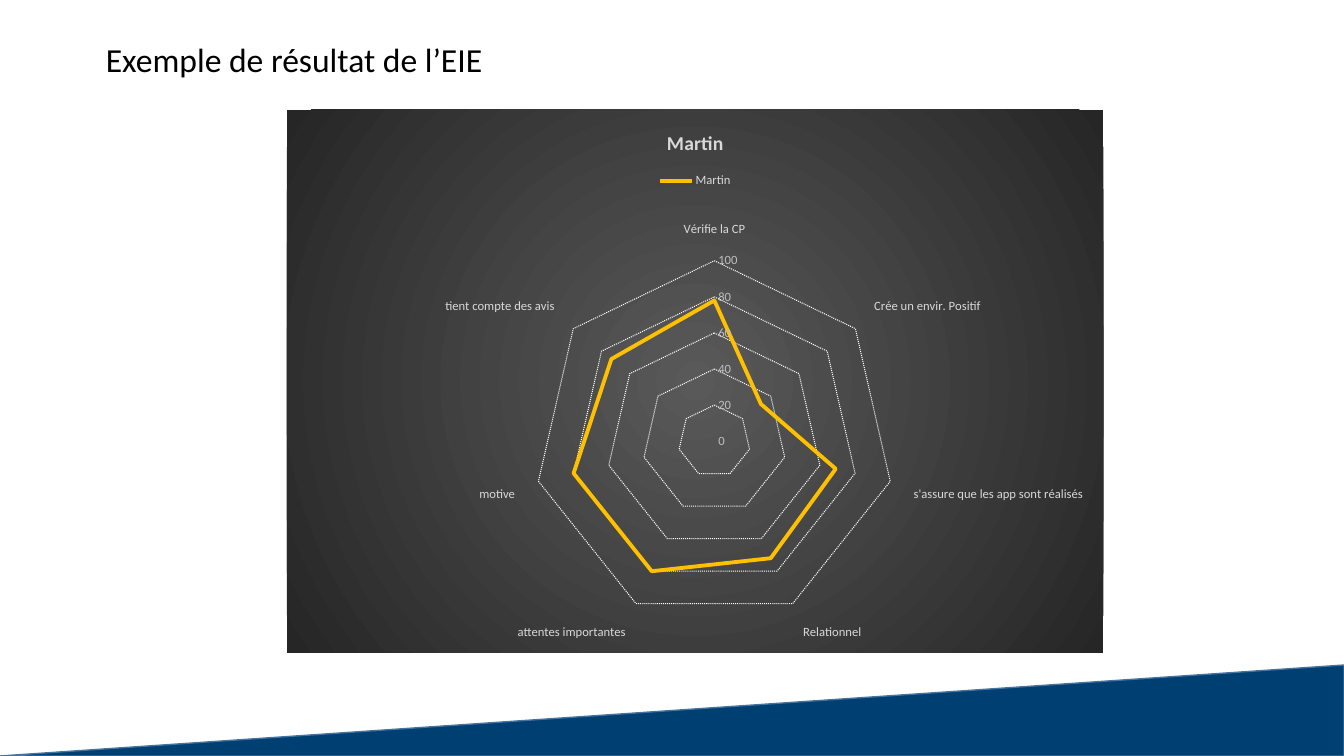
from lxml import etree
from pptx import Presentation
from pptx.chart import data
from pptx.dml import color
from pptx.enum import chart as chart_enum, dml, shapes, text
from pptx.oxml import ns, parse_xml
from pptx.util import Pt

FONT = "Calibri"
RESULTS = {
    "Vérifie la CP": 78,
    "Crée un envir. Positif": 33,
    "s'assure que les app sont réalisés": 69,
    "Relationnel": 72,
    "attentes importantes": 80,
    "motive": 80,
    "tient compte des avis": 73,
}
PLOT_AREA = {"x": 0.274, "y": 0.278, "w": 0.499, "h": 0.665}


def rgb(value):
    return color.RGBColor.from_string(value)


def style_font(font, size, fill, bold=False):
    font.name = FONT
    font.size = Pt(size)
    font.bold = bold
    font.color.rgb = rgb(fill)


def style_line(line, fill, width):
    line.color.rgb = rgb(fill)
    line.width = Pt(width)


def add_band(slide, left, top, width, height):
    band = slide.shapes.add_shape(
        shapes.MSO_SHAPE.ISOSCELES_TRIANGLE, Pt(left), Pt(top), Pt(width), Pt(height))
    band.adjustments[0] = 1
    band.shadow.inherit = False
    band.fill.solid()
    band.fill.fore_color.rgb = rgb("003F72")
    style_line(band.line, "43739E", 1)


def set_title(slide, left, top, width, height):
    title = slide.shapes.title
    title.left, title.top, title.width, title.height = map(Pt, (left, top, width, height))
    frame = title.text_frame
    frame.text = "Exemple de résultat de l’EIE"
    frame.margin_left = frame.margin_top = frame.margin_right = frame.margin_bottom = 0
    frame.vertical_anchor = text.MSO_ANCHOR.TOP
    frame.auto_size = text.MSO_AUTO_SIZE.NONE
    frame.word_wrap = True
    paragraph = frame.paragraphs[0]
    paragraph.alignment = text.PP_ALIGN.LEFT
    style_font(paragraph.runs[0].font, 24, "000000")


def fill_chart_background(chart, centre, edge):
    properties = parse_xml(
        f'<c:spPr {ns.nsdecls("c", "a")}><a:gradFill><a:gsLst>'
        f'<a:gs pos="0"><a:srgbClr val="{centre}"/></a:gs>'
        f'<a:gs pos="100000"><a:srgbClr val="{edge}"/></a:gs></a:gsLst>'
        '<a:path path="circle"><a:fillToRect l="50000" t="50000" r="50000" b="50000"/></a:path>'
        '</a:gradFill><a:ln><a:noFill/></a:ln></c:spPr>')
    chart.element.find(ns.qn("c:chart")).addnext(properties)


def place_plot(chart):
    plot_area = chart.element.find(".//" + ns.qn("c:plotArea"))
    layout = plot_area.find(ns.qn("c:layout"))
    if layout is None:
        layout = etree.Element(ns.qn("c:layout"))
        plot_area.insert(0, layout)
    manual = etree.SubElement(layout, ns.qn("c:manualLayout"))
    settings = {"layoutTarget": "inner", "xMode": "edge", "yMode": "edge", **PLOT_AREA}
    for name, value in settings.items():
        etree.SubElement(manual, ns.qn(f"c:{name}"), val=str(value))


def style_axes(chart):
    category_axis, value_axis = chart.category_axis, chart.value_axis
    for axis, label_color in ((category_axis, "D9D9D9"), (value_axis, "BFBFBF")):
        axis.major_tick_mark = axis.minor_tick_mark = chart_enum.XL_TICK_MARK.NONE
        style_font(axis.tick_labels.font, 9, label_color)
    category_axis.has_major_gridlines = False
    style_line(category_axis.format.line, "F2F2F2", 1)
    axis_color = category_axis.format.element.find(
        ".//" + ns.qn("a:srgbClr")) if hasattr(category_axis.format, "element") else None
    if axis_color is not None:
        etree.SubElement(axis_color, ns.qn("a:alpha"), val="54000")
    value_axis.minimum_scale, value_axis.maximum_scale = 0, 100
    value_axis.major_unit = 20
    value_axis.format.line.fill.background()
    value_axis.has_major_gridlines = True
    grid = value_axis.major_gridlines.format.line
    style_line(grid, "FFFFFF", 0.75)
    grid.dash_style = dml.MSO_LINE.ROUND_DOT


def add_radar(slide, left, top, width, height):
    chart_data = data.CategoryChartData()
    chart_data.categories = list(RESULTS)
    chart_data.add_series("Martin", list(RESULTS.values()))
    chart = slide.shapes.add_chart(
        chart_enum.XL_CHART_TYPE.RADAR, Pt(left), Pt(top), Pt(width), Pt(height),
        chart_data).chart
    style_font(chart.font, 10, "000000")
    fill_chart_background(chart, "595959", "262626")
    place_plot(chart)
    style_axes(chart)

    chart.has_title = True
    chart.chart_title.text_frame.text = "Martin"
    chart.chart_title.include_in_layout = False
    style_font(chart.chart_title.text_frame.paragraphs[0].runs[0].font, 14, "D9D9D9", True)

    chart.has_legend = True
    chart.legend.position = chart_enum.XL_LEGEND_POSITION.TOP
    chart.legend.include_in_layout = False
    style_font(chart.legend.font, 9, "D9D9D9")

    series = chart.plots[0].series[0]
    series.smooth = False
    series.marker.style = chart_enum.XL_MARKER_STYLE.NONE
    style_line(series.format.line, "FFC000", 2.75)


def build_result_slide(presentation):
    slide = presentation.slides.add_slide(presentation.slide_layouts[5])
    add_band(slide, 0, 475, 960, 65)
    set_title(slide, 75.6, 28, 756, 50)
    add_radar(slide, 205, 78.5, 583.2, 387.7)


def main():
    presentation = Presentation()
    presentation.slide_width, presentation.slide_height = Pt(960), Pt(540)
    build_result_slide(presentation)
    presentation.save("out.pptx")


if __name__ == "__main__":
    main()
